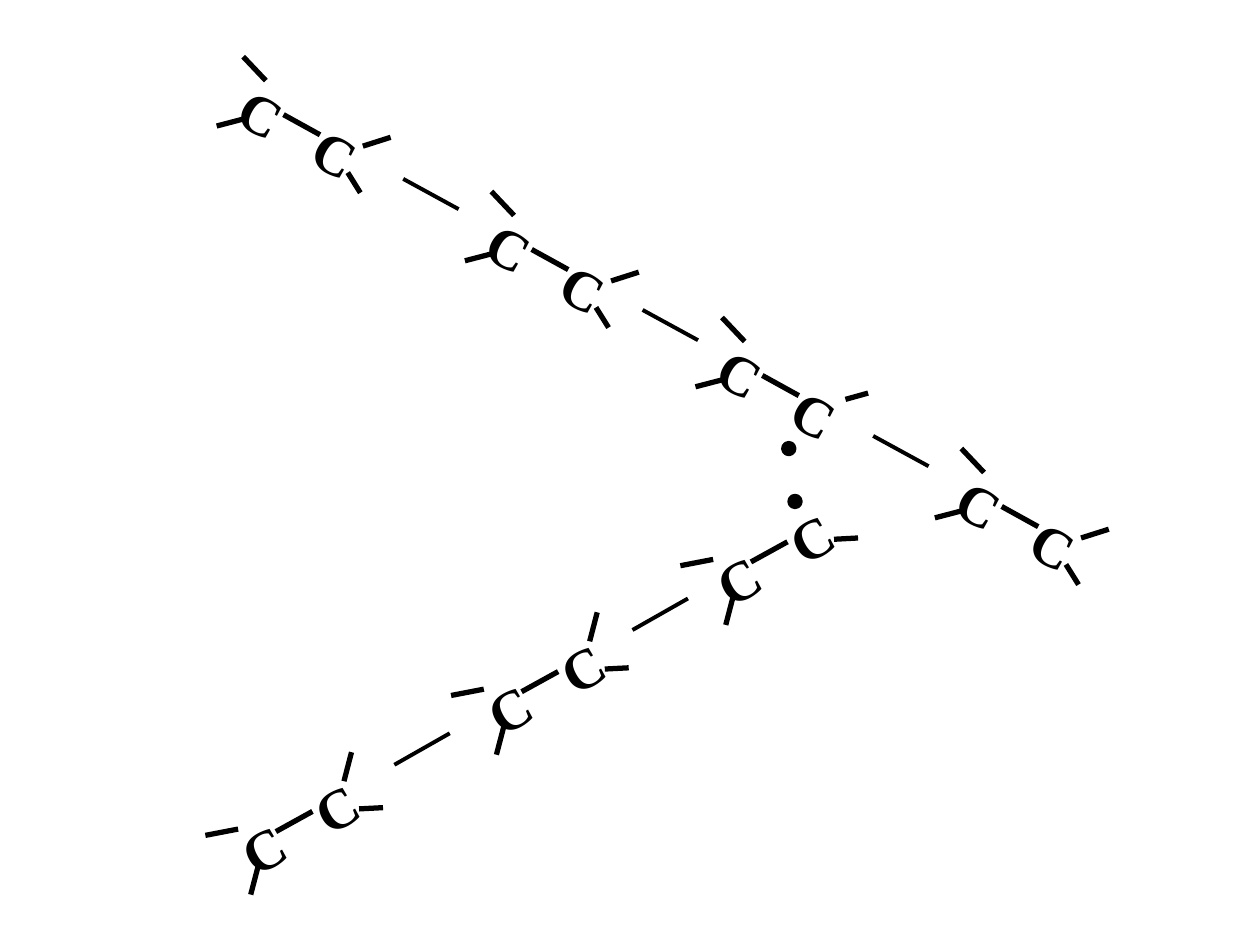
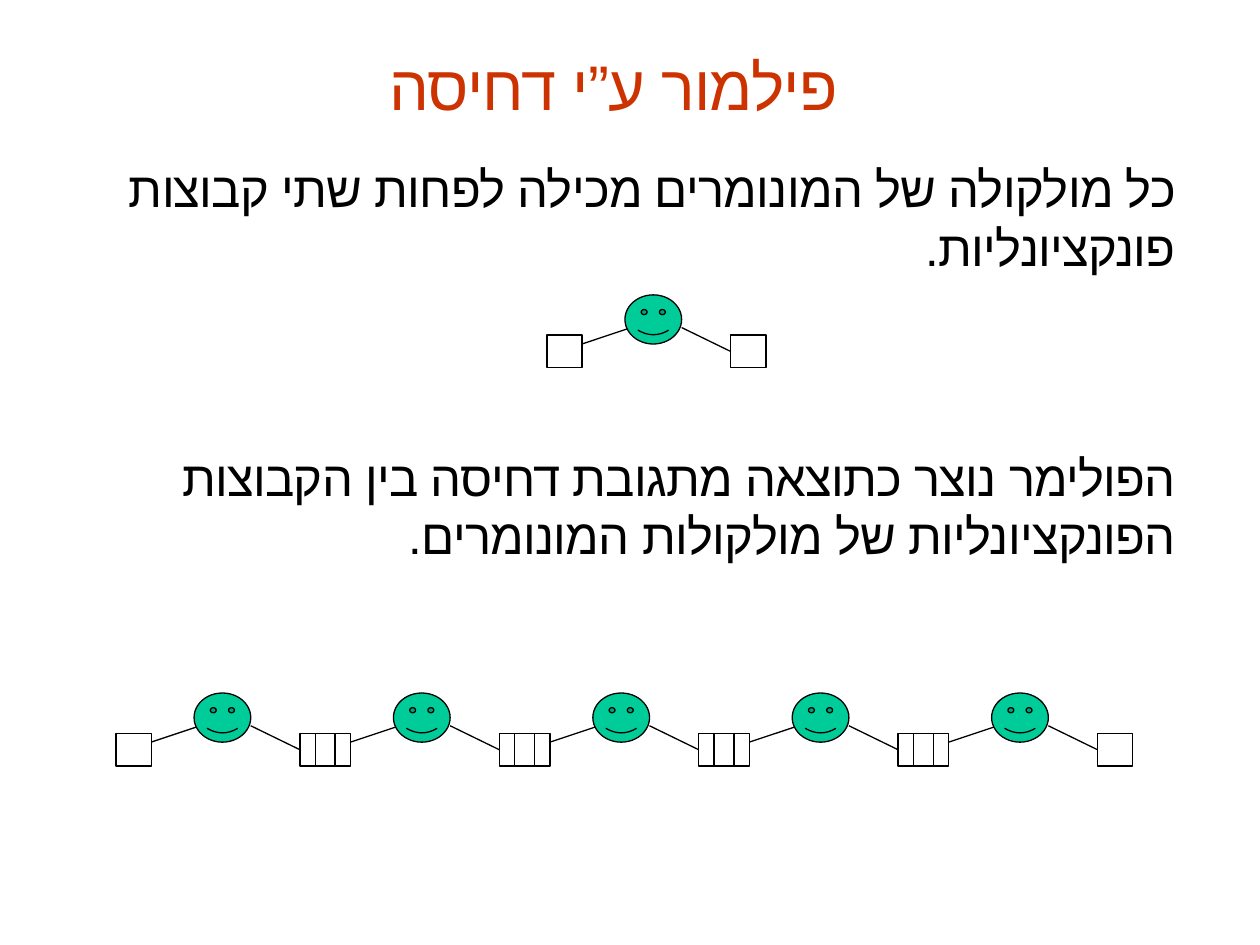
from pptx import Presentation
from pptx.dml.color import RGBColor
from pptx.enum.shapes import MSO_CONNECTOR, MSO_SHAPE
from pptx.enum.text import MSO_ANCHOR, PP_ALIGN
from pptx.oxml.ns import qn
from pptx.util import Inches, Pt
from lxml.etree import SubElement

COLORS = {"ink": "000000", "title": "CC3300", "face": "00CC99"}
HEBREW_FONT = "Arial"
HEBREW_SPACING = "-40"

TITLE = "פילמור ע”י דחיסה"
STATEMENTS = [
    ("כל מולקולה של המונומרים מכילה לפחות שתי קבוצות פונקציונליות.", (0.68, 1.21, 8.75, 1.03)),
    ("הפולימר נוצר כתוצאה מתגובת דחיסה בין הקבוצות הפונקציונליות של מולקולות המונומרים.",
     (0.68, 3.5, 8.75, 1.5)),
]

CARBON_SIZE = (0.67, 0.63)
CARBON_CHAINS = [
    {
        "angle": 28.6,
        "units": [(1.81, 0.61), (3.78, 1.68), (5.61, 2.68), (7.51, 3.72)],
        "radical_unit": 2,
        "radical_dot": (6.22, 3.52),
        "second_carbon": (0.59, 0.32),
        "bonds": [(0.44, 0.3, 0.73, 0.46), (0.12, -0.16, 0.3, 0.03), (0.14, 0.33, -0.09, 0.39)],
        "full_arms": [(1.29, 0.48, 1.07, 0.55), (0.95, 0.76, 1.05, 0.92)],
        "radical_arms": [(1.1, 0.49, 1.28, 0.44)],
        "links": [(3.2, 1.42), (5.1, 2.46), (6.93, 3.46)],
        "link_step": (0.44, 0.24),
    },
    {
        "angle": 330.5,
        "units": [(1.82, 6.38), (3.77, 5.27), (5.59, 4.24)],
        "radical_unit": 2,
        "radical_dot": (6.27, 3.94),
        "second_carbon": (0.58, -0.33),
        "bonds": [(0.37, 0.22, 0.66, 0.06), (-0.19, 0.25, 0.07, 0.2), (0.23, 0.49, 0.17, 0.72)],
        "full_arms": [(0.97, -0.41, 0.91, -0.18), (1.03, 0.04, 1.22, 0.03)],
        "radical_arms": [(1.03, 0.04, 1.22, 0.03)],
        "links": [(3.13, 6.07), (5.02, 5.0)],
        "link_step": (0.44, -0.25),
    },
]

SINGLE_MONOMER = (4.34, 2.34)
POLYMER_START = (0.92, 5.5)
POLYMER_LENGTH = 5
POLYMER_SPAN = 6.33
MONOMER_ARMS = [(1.07, 0.26, 1.46, 0.45), (0.28, 0.39, 0.67, 0.26)]
MONOMER_GROUPS = [(1.46, 0.32, 0.28, 0.26), (0, 0.32, 0.28, 0.26)]
MONOMER_FACE = (0.62, 0, 0.45, 0.39)


def color(name):
    return RGBColor.from_string(COLORS[name])


def shifted(box, origin):
    x, y, *rest = box
    return (origin[0] + x, origin[1] + y, *rest)


def add_line(shapes, start, end, width):
    line = shapes.add_connector(MSO_CONNECTOR.STRAIGHT, *map(Inches, (*start, *end)))
    line.line.color.rgb = color("ink")
    line.line.width = Pt(width)
    SubElement(line._element.spPr, qn("a:effectLst"))


def add_segments(shapes, segments, origin, width):
    for x1, y1, x2, y2 in segments:
        add_line(shapes, shifted((x1, y1), origin), shifted((x2, y2), origin), width)


def add_outlined(shapes, kind, box, width, fill=None):
    shape = shapes.add_shape(kind, *map(Inches, box))
    shape.shadow.inherit = False
    if fill:
        shape.fill.solid()
        shape.fill.fore_color.rgb = color(fill)
    else:
        shape.fill.background()
    shape.line.color.rgb = color("ink")
    shape.line.width = Pt(width)
    return shape


def add_text(shapes, text, box, size, font, ink="ink", bold=False, align=None, rtl=False, wrap=True):
    text_box = shapes.add_textbox(*map(Inches, box))
    frame = text_box.text_frame
    frame.word_wrap = wrap
    frame.vertical_anchor = MSO_ANCHOR.TOP
    paragraph = frame.paragraphs[0]
    paragraph.alignment = align
    run = paragraph.add_run()
    run.text = text
    run.font.size = Pt(size)
    run.font.name = font
    run.font.bold = bold
    run.font.color.rgb = color(ink)
    if rtl:
        paragraph._p.get_or_add_pPr().set("rtl", "1")
        properties = run._r.get_or_add_rPr()
        properties.set("spc", HEBREW_SPACING)
        SubElement(properties, qn("a:cs")).set("typeface", HEBREW_FONT)
    return text_box


def add_carbon_chain(slide, chain):
    shapes = slide.shapes.add_group_shape().shapes
    dot = add_outlined(shapes, MSO_SHAPE.OVAL, (*chain["radical_dot"], 0.08, 0.08), 3, "ink")
    dot.rotation = chain["angle"]
    for index, origin in enumerate(chain["units"]):
        for offset in ((0, 0), chain["second_carbon"]):
            box = (*shifted(offset, origin), *CARBON_SIZE)
            carbon = add_text(shapes, "C", box, 32, "Times New Roman", bold=True)
            carbon.rotation = chain["angle"]
        arms = "radical_arms" if index == chain["radical_unit"] else "full_arms"
        add_segments(shapes, chain["bonds"] + chain[arms], origin, 3)
    for start in chain["links"]:
        add_line(shapes, start, shifted(chain["link_step"], start), 2.25)


def add_monomer(shapes, origin):
    add_segments(shapes, MONOMER_ARMS, origin, 0.75)
    for box in MONOMER_GROUPS:
        add_outlined(shapes, MSO_SHAPE.RECTANGLE, shifted(box, origin), 0.75)
    add_outlined(shapes, MSO_SHAPE.SMILEY_FACE, shifted(MONOMER_FACE, origin), 0.75, "face")


def build_radical_slide(slide):
    for chain in CARBON_CHAINS:
        add_carbon_chain(slide, chain)


def build_condensation_slide(slide):
    add_text(slide.shapes, TITLE, (2.92, 0.33, 3.9, 0.5), 36, "Arial", "title",
             align=PP_ALIGN.CENTER, rtl=True, wrap=False)
    add_monomer(slide.shapes.add_group_shape().shapes, SINGLE_MONOMER)
    polymer = slide.shapes.add_group_shape().shapes
    pitch = POLYMER_SPAN / (POLYMER_LENGTH - 1)
    for index in range(POLYMER_LENGTH):
        add_monomer(polymer, shifted((index * pitch, 0), POLYMER_START))
    for text, box in STATEMENTS:
        add_text(slide.shapes, text, box, 28, "Times New Roman", align=PP_ALIGN.RIGHT, rtl=True)


def main():
    presentation = Presentation()
    presentation.slide_width = Inches(10)
    presentation.slide_height = Inches(7.5)
    blank = presentation.slide_layouts[6]
    for build in (build_radical_slide, build_condensation_slide):
        build(presentation.slides.add_slide(blank))
    presentation.save("out.pptx")


if __name__ == "__main__":
    main()
